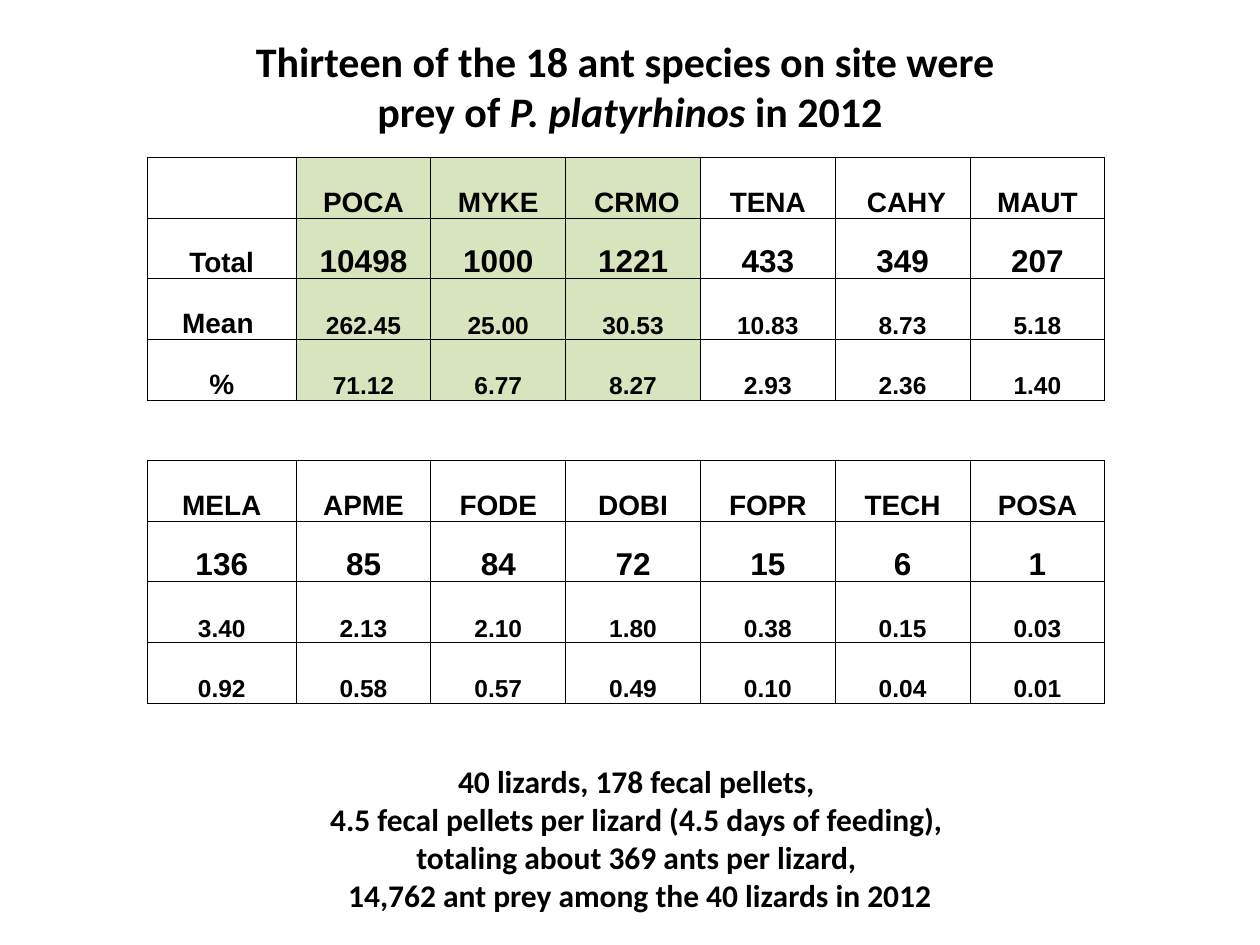
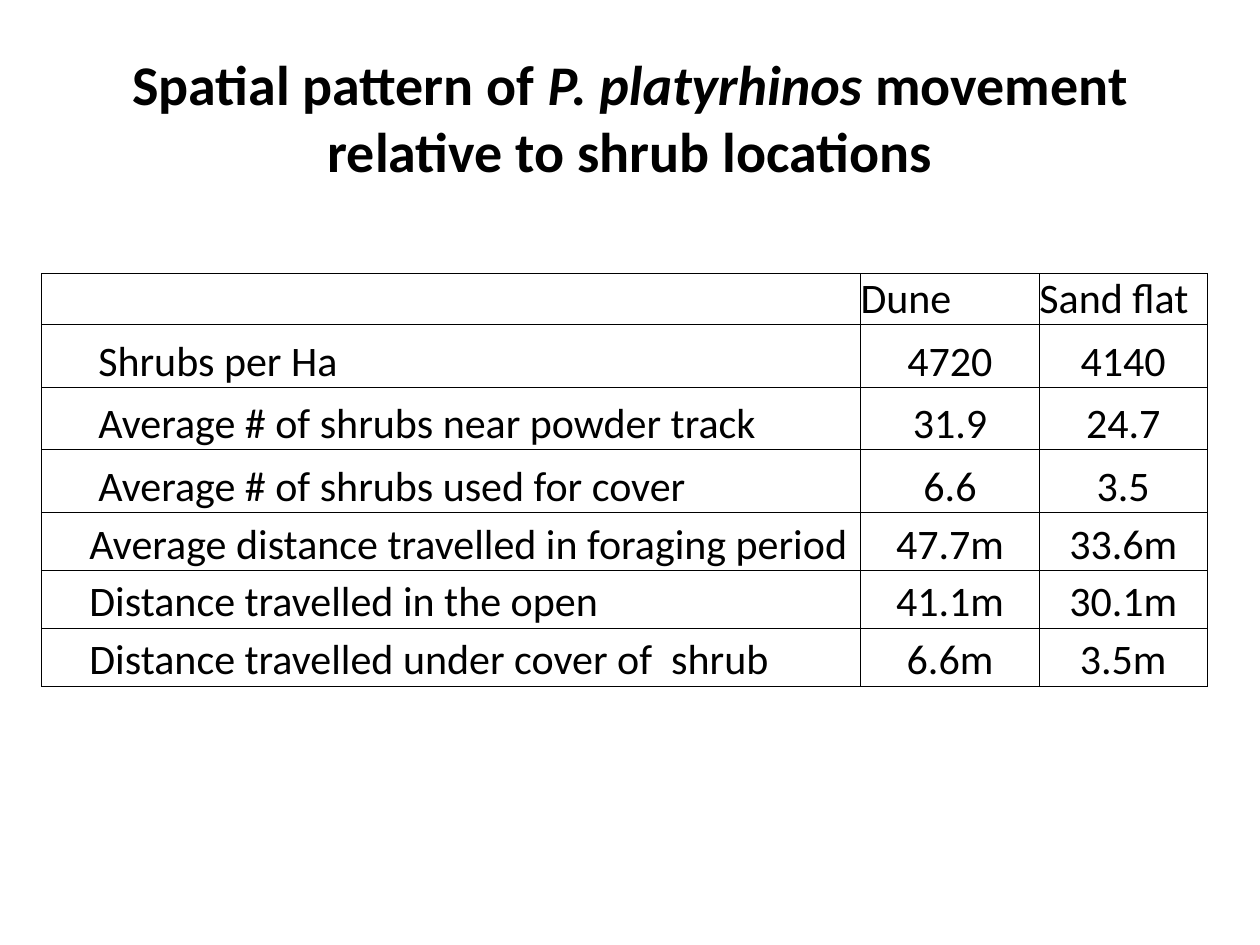
from lxml import etree
from pptx import Presentation
from pptx.dml.color import RGBColor
from pptx.enum.text import MSO_ANCHOR, MSO_AUTO_SIZE, PP_ALIGN
from pptx.oxml.ns import qn
from pptx.util import Inches, Pt

LEFT, CENTER = PP_ALIGN.LEFT, PP_ALIGN.CENTER
MIDDLE, BOTTOM = MSO_ANCHOR.MIDDLE, MSO_ANCHOR.BOTTOM
NO_FIT = MSO_AUTO_SIZE.NONE
COLORS = {"ink": "000000", "top prey": "D7E4BD"}
HEAD, DATA = "Calibri", "Arial"

# Titles: lists of lines, each a list of (text, italic)
PREY_TITLE = [
    [("Thirteen of the 18 ant species on site were ", False)],
    [("prey of ", False), ("P. platyrhinos", True), (" in 2012", False)],
]
MOVE_TITLE = [[("Spatial pattern of ", False), ("P. platyrhinos ", True),
               ("movement relative to shrub locations", False)]]

# Ant counts: code, total, mean, percent
LABELS = ("", "Total", "Mean ", "%")
TOP_ANTS = [
    ("POCA", "10498", "262.45", "71.12"),
    ("MYKE", "1000", "25.00", "6.77"),
    (" CRMO", "1221", "30.53", "8.27"),
    ("TENA", "433", "10.83", "2.93"),
    (" CAHY", "349", "8.73", "2.36"),
    ("MAUT", "207", "5.18", "1.40"),
]
RARE_ANTS = [
    ("MELA", "136", "3.40", "0.92"),
    ("APME", "85", "2.13", "0.58"),
    ("FODE", "84", "2.10", "0.57"),
    ("DOBI", "72", "1.80", "0.49"),
    ("FOPR", "15", "0.38", "0.10"),
    ("TECH", "6", "0.15", "0.04"),
    ("POSA", "1", "0.03", "0.01"),
]
ANT_SIZES = (16, 18, 14, 14)
SHADED = (1, 2, 3)
SUMMARY = [
    "40 lizards, 178 fecal pellets, ",
    "4.5 fecal pellets per lizard (4.5 days of feeding), ",
    "totaling about 369 ants per lizard, ",
    "14,762 ant prey among the 40 lizards in 2012",
]

# Shrub data: label, dune, sand flat, label indent, row height
SHRUBS = [
    ("", "Dune", "Sand flat", 0, 0.4),
    ("Shrubs per Ha", "4720", "4140", 0.45, 0.5),
    ("Average # of shrubs near powder track", "31.9", "24.7", 0.45, 0.49),
    ("Average # of shrubs used for cover", "6.6", "3.5", 0.45, 0.5),
    ("Average distance travelled in foraging period", "47.7m", "33.6m", 0.38, 0.46),
    ("Distance travelled in the open", "41.1m", "30.1m", 0.38, 0.46),
    ("Distance travelled under cover of  shrub", "6.6m", "3.5m", 0.38, 0.46),
]


def add_run(para, text, size, font, bold=False, italic=False):
    run = para.add_run()
    run.text = text
    face = run.font
    face.name, face.size = font, Pt(size)
    face.bold, face.italic = bold, italic
    face.color.rgb = RGBColor.from_string(COLORS["ink"])


def add_slide(deck, lines, box, size):
    """Add a slide with a bold centred title."""
    slide = deck.slides.add_slide(deck.slide_layouts[5])
    title = slide.shapes.title
    title.left, title.top, title.width, title.height = map(Inches, box)
    frame = title.text_frame
    frame.auto_size, frame.vertical_anchor = NO_FIT, MIDDLE
    para = frame.paragraphs[0]
    para.alignment = CENTER
    for i, line in enumerate(lines):
        if i:
            para.add_line_break()
        for text, italic in line:
            add_run(para, text, size, HEAD, True, italic)
    return slide


def add_grid(slide, left, top, cols, rows):
    """Add a plain table without style bands."""
    frame = slide.shapes.add_table(len(rows), len(cols), Inches(left), Inches(top),
                                   Inches(sum(cols)), Inches(sum(rows)))
    table = frame.table
    table.first_row = table.horz_banding = False
    for col, width in zip(table.columns, cols):
        col.width = Inches(width)
    for row, height in zip(table.rows, rows):
        row.height = Inches(height)
    return table


def edge(cell, sides="LRTB"):
    """Draw thin lines on the named sides and clear the rest."""
    props = cell._tc.get_or_add_tcPr()
    for i, side in enumerate("LRTB"):
        line = etree.Element(qn(f"a:ln{side}"), w=str(Pt(0.5)))
        if side in sides:
            fill = etree.SubElement(line, qn("a:solidFill"))
            etree.SubElement(fill, qn("a:srgbClr"), val=COLORS["ink"])
        else:
            etree.SubElement(line, qn("a:noFill"))
        props.insert(i, line)


def fill_cell(cell, text, size, font, bold=False, align=CENTER,
              pads=(0, 0, 0, 0), shade=None, sides="LRTB"):
    if shade:
        cell.fill.solid()
        cell.fill.fore_color.rgb = RGBColor.from_string(COLORS[shade])
    else:
        cell.fill.background()
    edge(cell, sides)
    if text:
        cell.vertical_anchor = BOTTOM
        (cell.margin_left, cell.margin_top,
         cell.margin_right, cell.margin_bottom) = map(Inches, pads)
        para = cell.text_frame.paragraphs[0]
        para.alignment = align
        add_run(para, text, size, font, bold)


def build_prey(deck):
    slide = add_slide(deck, PREY_TITLE, (0.5, 0.33, 9, 0.7), 24)

    # Two blocks of ants with an open row between them
    top = list(zip(LABELS, *TOP_ANTS))
    rare = list(zip(*RARE_ANTS))
    gap = [("",) * 7]
    sizes = ANT_SIZES + (16,) + ANT_SIZES
    table = add_grid(slide, 1.17, 1.25, [1.18] + [1.07] * 6, [4.33 / 9] * 9)
    for r, row in enumerate(top + gap + rare):
        for c, text in enumerate(row):
            label = c == 0 and r < len(top)
            shade = "top prey" if c in SHADED and r < len(top) else None
            fill_cell(table.cell(r, c), text, 16 if label else sizes[r], DATA, True,
                      pads=(0.01, 0.01, 0.01, 0), shade=shade,
                      sides="TB" if r == len(top) else "LRTB")

    # Summary
    box = slide.shapes.add_textbox(Inches(1.58), Inches(6), Inches(7), Inches(1.31))
    frame = box.text_frame
    frame.word_wrap = True
    for i, line in enumerate(SUMMARY):
        para = frame.add_paragraph() if i else frame.paragraphs[0]
        para.alignment = CENTER
        add_run(para, line, 18, HEAD, True)


def build_move(deck):
    slide = add_slide(deck, MOVE_TITLE, (0.5, 0.3, 9, 1.25), 32)
    table = add_grid(slide, 0.33, 2.17, [6.5, 1.42, 1.33], [row[-1] for row in SHRUBS])
    for r, (*texts, indent, _) in enumerate(SHRUBS):
        for c, text in enumerate(texts):
            fill_cell(table.cell(r, c), text, 24, HEAD,
                      align=CENTER if r and c else LEFT,
                      pads=(0 if c else indent, 0, 0, 0))


def main():
    deck = Presentation()
    deck.slide_width, deck.slide_height = Inches(10), Inches(7.5)
    build_prey(deck)
    build_move(deck)
    deck.save("out.pptx")


if __name__ == "__main__":
    main()
